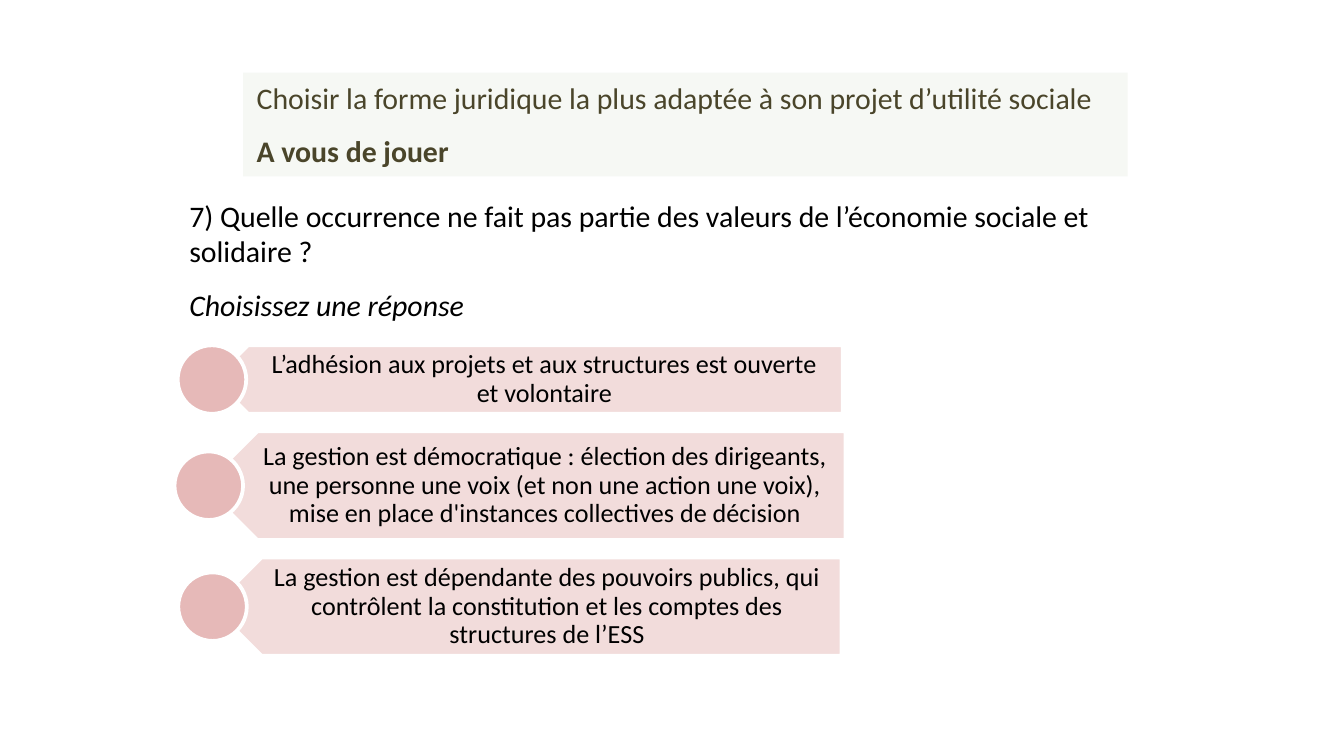
from dataclasses import dataclass

from pptx import Presentation
from pptx.dml.color import RGBColor
from pptx.enum.shapes import MSO_SHAPE as Kind
from pptx.enum.text import MSO_ANCHOR as Anchor, MSO_AUTO_SIZE as Fit, PP_ALIGN as Align
from pptx.shapes.autoshape import Shape
from pptx.slide import Slide
from pptx.text.text import TextFrame
from pptx.util import Pt

BLACK, WHITE, OLIVE = "000000", "FFFFFF", "4A452A"
MINT, ROSE, PINK = "F6F8F4", "F2DCDB", "E6B9B8"
DOT = 36.7
GAP = 9.35
TOP = 185


@dataclass
class Answer:
    text: str
    left: float
    width: float
    height: float
    inset: float
    dot: float


@dataclass
class Line:
    text: str
    style: dict
    space: float = 1.0
    align: Align = Align.LEFT


ANSWERS = [
    Answer("L’adhésion aux projets et aux structures est ouverte et volontaire",
           114.5, 337, 36.7, 9.3, 95.2),
    Answer("La gestion est démocratique : élection des dirigeants, une personne une voix "
           "(et non une action une voix), mise en place d'instances collectives de décision",
           108.7, 344.2, 58.3, 14.4, 93.5),
    Answer("La gestion est dépendante des pouvoirs publics, qui contrôlent la constitution "
           "et les comptes des structures de l’ESS",
           113.8, 337, 52.6, 13.6, 95.5),
]


def color(code: str) -> RGBColor:
    return RGBColor.from_string(code)


def write(frame: TextFrame, lines: list[Line], size: float, ink: str) -> None:
    frame.word_wrap = True
    for n, line in enumerate(lines):
        para = frame.add_paragraph() if n else frame.paragraphs[0]
        para.alignment = line.align
        para.line_spacing = line.space
        para.space_before = Pt(0)
        run = para.add_run()
        run.text = line.text
        look = {"name": "Calibri", "size": Pt(size)} | line.style
        for key, value in look.items():
            setattr(run.font, key, value)
        run.font.color.rgb = color(ink)


def draw(slide: Slide, kind: Kind, x: float, y: float, w: float, h: float,
         fill: str) -> Shape:
    shape = slide.shapes.add_shape(kind, Pt(x), Pt(y), Pt(w), Pt(h))
    shape.shadow.inherit = False
    shape.fill.solid()
    shape.fill.fore_color.rgb = color(fill)
    shape.line.color.rgb = color(WHITE)
    shape.line.width = Pt(2)
    return shape


def add_title(slide: Slide) -> None:
    title = slide.shapes.title
    place = {"left": 130.3, "top": 38.9, "width": 473.8, "height": 55.6}
    for key, value in place.items():
        setattr(title, key, Pt(value))
    title.fill.solid()
    title.fill.fore_color.rgb = color(MINT)
    frame = title.text_frame
    frame.auto_size = Fit.NONE
    frame.vertical_anchor = Anchor.TOP
    write(frame, [
        Line("Choisir la forme juridique la plus adaptée à son projet d’utilité sociale", {}),
        Line("A vous de jouer", {"bold": True}, 1.5),
    ], 16, OLIVE)


def add_query(slide: Slide) -> None:
    box = slide.shapes.add_textbox(Pt(94.3), Pt(102.2), Pt(536.4), Pt(74.9))
    write(box.text_frame, [
        Line("7) Quelle occurrence ne fait pas partie des valeurs "
             "de l’économie sociale et solidaire ?", {}),
        Line("Choisissez une réponse", {"italic": True}, 1.5),
    ], 16, BLACK)


def add_answer(slide: Slide, item: Answer, top: float) -> None:
    """Draw the left-pointing plate, its upright text and its dot."""
    plate = draw(slide, Kind.PENTAGON, item.left, top, item.width, item.height, ROSE)
    plate.rotation = 180
    box = slide.shapes.add_textbox(Pt(item.left + item.inset), Pt(top),
                                   Pt(item.width - item.inset), Pt(item.height))
    frame = box.text_frame
    frame.vertical_anchor = Anchor.MIDDLE
    pads = {"left": 16, "top": 4.2, "right": 8, "bottom": 4.2}
    for side, pad in pads.items():
        setattr(frame, f"margin_{side}", Pt(pad))
    write(frame, [Line(item.text, {}, 0.9, Align.CENTER)], 14, BLACK)
    draw(slide, Kind.OVAL, item.dot, top + (item.height - DOT) / 2, DOT, DOT, PINK)


def main() -> None:
    deck = Presentation()
    deck.slide_width, deck.slide_height = Pt(720), Pt(405)
    slide = deck.slides.add_slide(deck.slide_layouts[5])
    add_title(slide)
    add_query(slide)
    top = TOP
    for item in ANSWERS:
        add_answer(slide, item, top)
        top += item.height + GAP
    deck.save("out.pptx")


if __name__ == "__main__":
    main()
